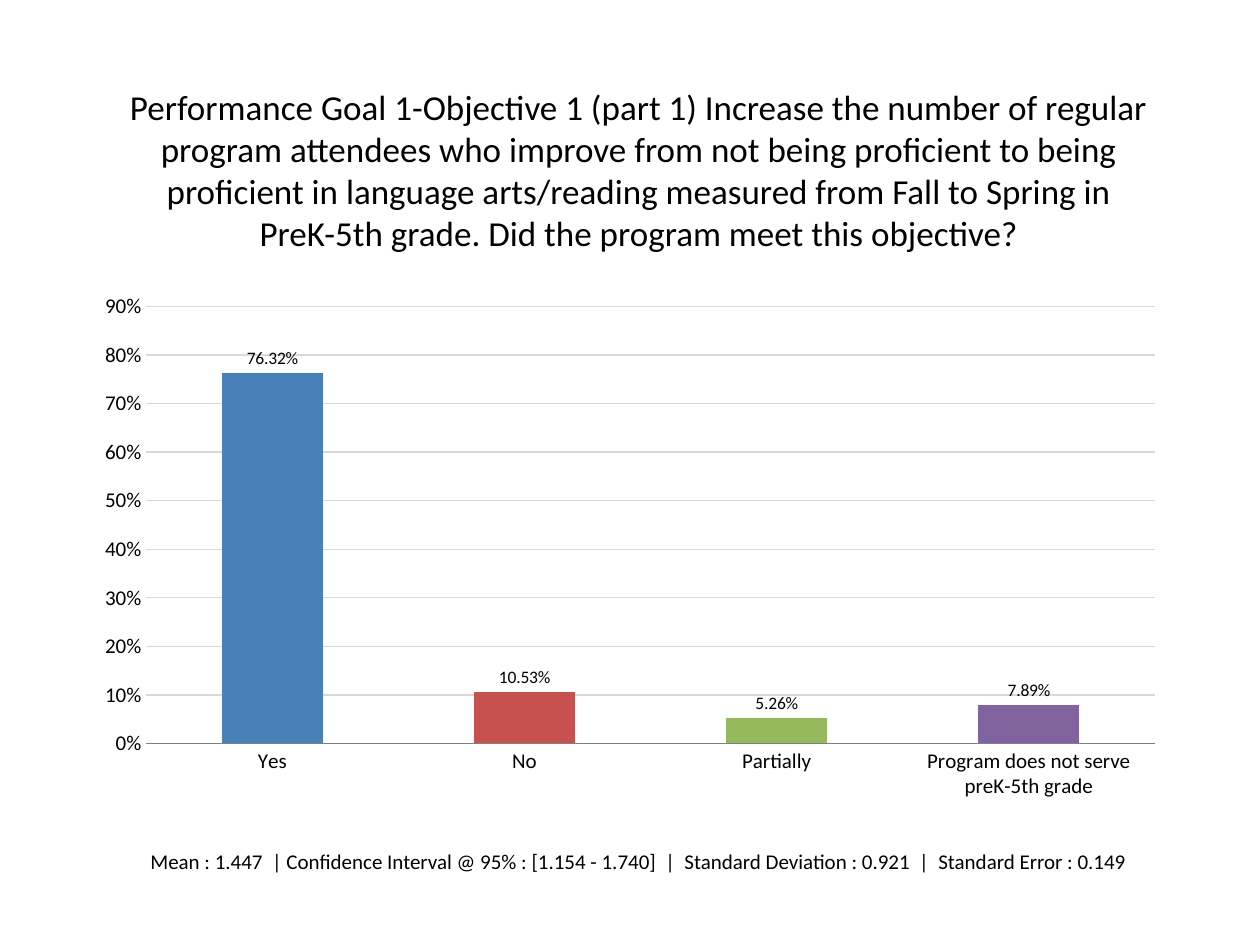
from pptx import Presentation
from pptx import util as u
from pptx.chart import data as chart_data
from pptx.dml.color import RGBColor
from pptx.enum import chart as ch, shapes, text

# Content
QUESTION = (
    "Performance Goal 1-Objective 1 (part 1) Increase the number of regular "
    "program attendees who improve from not being proficient to being "
    "proficient in language arts/reading measured from Fall to Spring in "
    "PreK-5th grade. Did the program meet this objective?"
)
STATISTICS = (
    "Mean : 1.447  | Confidence Interval @ 95% : [1.154 - 1.740]  |  "
    "Standard Deviation : 0.921  |  Standard Error : 0.149"
)
ANSWERS = [  # answer, share, bar colour
    ("Yes", 0.7632, "4980BA"),
    ("No", 0.1053, "C6514E"),
    ("Partially", 0.0526, "96B95D"),
    ("Program does not serve preK-5th grade", 0.0789, "81649F"),
]

THEME = {
    "font": "Calibri",
    "ink": "000000",
    "axis": "808080",
    "grid": "D8D8D8",
    "question": 20,
    "base": 18,
    "small": 12,
    "label": 10,
}

# Layout as shares of the slide: left, top, width, height
WIDTH, HEIGHT = u.Inches(10), u.Inches(7.5)
BAND_WIDTH, BAND_HEIGHT = 8.68 / 10, 1.39 / 7.5
QUESTION_BOX = (0.73 / 10, 0.65 / 7.5, BAND_WIDTH, BAND_HEIGHT)
CHART_BOX = (0.66 / 10, 2.25 / 7.5, BAND_WIDTH, 4.17 / 7.5)
STATISTICS_BOX = (0.73 / 10, 6.14 / 7.5, BAND_WIDTH, BAND_HEIGHT)


def place(box):
    return [round(share * side) for share, side in zip(box, (WIDTH, HEIGHT) * 2)]


def apply(target, formats):
    for name, value in formats.items():
        setattr(target, name, value)


def colour(name):
    return RGBColor.from_string(THEME.get(name, name))


def style_font(font, size):
    apply(font, {"name": THEME["font"], "size": u.Pt(THEME[size]), "bold": False})
    font.color.rgb = colour("ink")


def style_line(line, name):
    line.width = u.Pt(0.75)
    line.color.rgb = colour(name)


def add_band(slide, box, words, size):
    band = slide.shapes.add_shape(shapes.MSO_SHAPE.ROUNDED_RECTANGLE, *place(box))
    band.shadow.inherit = False
    band.fill.background()
    band.line.fill.background()
    frame = band.text_frame
    apply(frame, {"word_wrap": True, "vertical_anchor": text.MSO_ANCHOR.MIDDLE})
    line = frame.paragraphs[0]
    apply(line, {"text": words, "alignment": text.PP_ALIGN.CENTER})
    style_font(line.runs[0].font, size)


def add_answers(slide):
    names, shares, colours = zip(*ANSWERS)
    answers = chart_data.CategoryChartData(number_format="0.00%")
    answers.categories = names
    answers.add_series("Series 1", shares)
    chart = slide.shapes.add_chart(
        ch.XL_CHART_TYPE.COLUMN_CLUSTERED, *place(CHART_BOX), answers
    ).chart
    apply(chart, {"has_legend": False, "has_title": False})
    style_font(chart.font, "base")

    # Axes
    for axis in (chart.category_axis, chart.value_axis):
        apply(axis, {"major_tick_mark": ch.XL_TICK_MARK.NONE,
                     "minor_tick_mark": ch.XL_TICK_MARK.NONE})
        style_font(axis.tick_labels.font, "small")
    style_line(chart.category_axis.format.line, "axis")
    scale = chart.value_axis
    apply(scale, {"minimum_scale": 0, "maximum_scale": 0.9, "major_unit": 0.1})
    apply(scale.tick_labels, {"number_format": "0%", "number_format_is_linked": False})
    scale.format.line.fill.background()
    style_line(scale.major_gridlines.format.line, "grid")

    # Bars and their labels
    plot = chart.plots[0]
    apply(plot, {"gap_width": 150, "vary_by_categories": False, "has_data_labels": True})
    apply(plot.data_labels, {
        "show_value": True,
        "number_format": "0.00%",
        "number_format_is_linked": False,
        "position": ch.XL_LABEL_POSITION.OUTSIDE_END,
    })
    style_font(plot.data_labels.font, "label")
    for index, shade in enumerate(colours):
        bar = plot.series[0].points[index].format
        bar.fill.solid()
        bar.fill.fore_color.rgb = colour(shade)


def main():
    deck = Presentation()
    apply(deck, {"slide_width": WIDTH, "slide_height": HEIGHT})
    slide = deck.slides.add_slide(deck.slide_layouts[6])
    add_band(slide, QUESTION_BOX, QUESTION, "question")
    add_answers(slide)
    add_band(slide, STATISTICS_BOX, STATISTICS, "small")
    deck.save("out.pptx")


if __name__ == "__main__":
    main()
